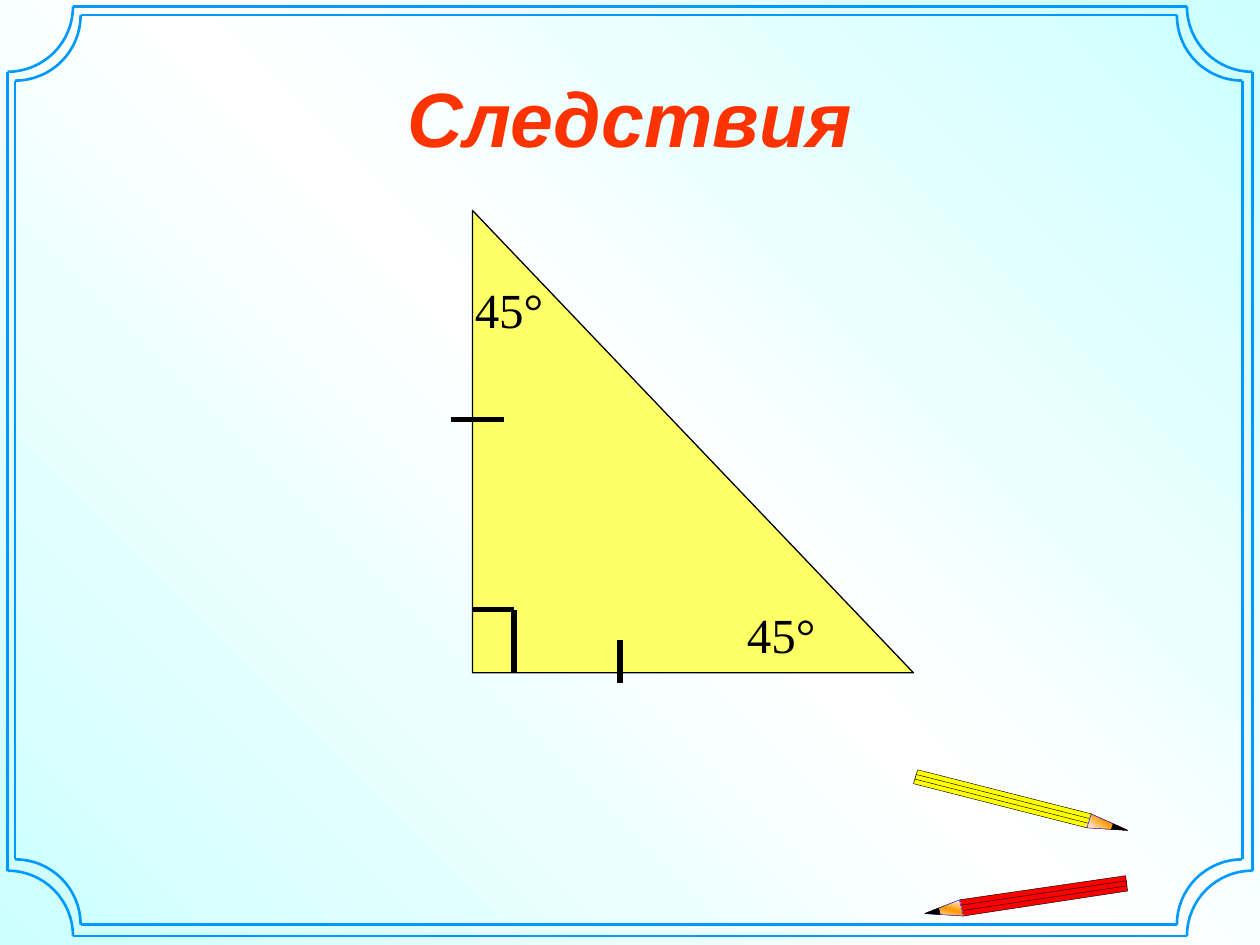
from math import cos, pi, sin

from lxml import etree
from pptx import Presentation
from pptx.dml.color import RGBColor
from pptx.enum.shapes import MSO_CONNECTOR, MSO_SHAPE
from pptx.enum.text import MSO_ANCHOR, PP_ALIGN
from pptx.oxml.ns import qn
from pptx.util import Inches, Pt

STRAIGHT = MSO_CONNECTOR.STRAIGHT
RIGHT_TRIANGLE = MSO_SHAPE.RIGHT_TRIANGLE
MIDDLE = MSO_ANCHOR.MIDDLE
CENTER = PP_ALIGN.CENTER
LEFT = PP_ALIGN.LEFT

CYAN = RGBColor(0xCC, 0xFF, 0xFF)
WHITE = RGBColor(0xFF, 0xFF, 0xFF)
BLACK = RGBColor(0, 0, 0)
TITLE_RED = RGBColor(0xFF, 0x33, 0x00)
TRIANGLE_YELLOW = RGBColor(0xFF, 0xFF, 0x66)
FRAME_BLUE = RGBColor(0x00, 0x99, 0xFF)
PENCIL_YELLOW = RGBColor(0xFF, 0xFF, 0x00)
PENCIL_RED = RGBColor(0xFF, 0, 0)
WOOD_ORANGE = RGBColor(0xFF, 0x99, 0x00)
WOOD_EDGE = RGBColor(0, 0, 0xFF)


def set_gradient(fill, edge, middle, angle):
    fill.gradient()
    fill.gradient_angle = angle
    stops = fill._xPr.find(qn("a:gradFill")).find(qn("a:gsLst"))
    for stop in list(stops):
        stops.remove(stop)
    for position, color in ((0, edge), (50000, middle), (100000, edge)):
        stop = etree.SubElement(stops, qn("a:gs"), pos=str(position))
        etree.SubElement(stop, qn("a:srgbClr"), val=str(color))


def add_line(slide, start, end, color, width):
    line = slide.shapes.add_connector(
        STRAIGHT, *(Inches(value) for value in (*start, *end)))
    line.line.color.rgb = color
    line.line.width = Pt(width)
    etree.SubElement(line._element.spPr, qn("a:effectLst"))


def add_outline(slide, points, color, width, closed=True):
    corners = [(Inches(x), Inches(y)) for x, y in points]
    builder = slide.shapes.build_freeform(*corners[0])
    builder.add_line_segments(corners[1:], close=closed)
    outline = builder.convert_to_shape()
    outline.shadow.inherit = False
    outline.line.color.rgb = color
    outline.line.width = Pt(width)
    outline.fill.background()
    return outline


def add_text(slide, box, text, size, font, color, align=LEFT):
    frame = slide.shapes.add_textbox(*(Inches(v) for v in box)).text_frame
    frame.word_wrap = True
    frame.text = text
    paragraph = frame.paragraphs[0]
    paragraph.alignment = align
    run_font = paragraph.runs[0].font
    run_font.size = Pt(size)
    run_font.name = font
    run_font.color.rgb = color
    return frame


def add_title(slide, box):
    frame = add_text(slide, box, "Следствия", 44, "Arial", TITLE_RED, CENTER)
    frame.vertical_anchor = MIDDLE
    run_font = frame.paragraphs[0].runs[0].font
    run_font.bold = True
    run_font.italic = True


def add_frame(slide, box, radius=0.52, steps=16):
    left, top, width, height = box
    right, bottom = left + width, top + height
    for y in (top, bottom):
        add_line(slide, (left + radius, y), (right - radius, y), FRAME_BLUE, 1.5)
    for x in (left, right):
        add_line(slide, (x, top + radius), (x, bottom - radius), FRAME_BLUE, 1.5)
    turns = [step * pi / 2 / steps for step in range(steps + 1)]
    for x, x_way in ((left, 1), (right, -1)):
        for y, y_way in ((top, 1), (bottom, -1)):
            arc = [(x + x_way * radius * cos(turn), y + y_way * radius * sin(turn))
                   for turn in turns]
            add_outline(slide, arc, FRAME_BLUE, 1.5, closed=False)


def add_triangle(slide, box):
    left, top, width, height = box
    bottom = top + height
    triangle = slide.shapes.add_shape(RIGHT_TRIANGLE, *(Inches(v) for v in box))
    triangle.shadow.inherit = False
    triangle.fill.solid()
    triangle.fill.fore_color.rgb = TRIANGLE_YELLOW
    triangle.line.color.rgb = BLACK
    triangle.line.width = Pt(0.75)

    for x, y, label_width in ((left - 0.08, top + 0.5, 0.83),
                              (left + 2.08, top + 3.08, 0.9)):
        label = add_text(slide, (x, y, label_width, 0.57), "45°", 28,
                         "Times New Roman", BLACK)
        label.paragraphs[0].space_before = Pt(3)

    corner = (left + 0.33, bottom - 0.5)
    marks = (
        (corner, (corner[0], bottom)),
        ((left, corner[1]), corner),
        ((left + 1.17, bottom - 0.26), (left + 1.17, bottom + 0.08)),
        ((left - 0.17, top + 1.66), (left + 0.25, top + 1.66)),
    )
    for start, end in marks:
        add_line(slide, start, end, BLACK, 3)


def between(start, end, share):
    return tuple(a + (b - a) * share for a, b in zip(start, end))


def add_pencil(slide, box, outline, color, wood_angle):
    left, top, width, height = box
    tail_top, tail_bottom, neck_top, neck_bottom, tip = [
        (left + x * width, top + y * height) for x, y in outline]

    for upper, lower in ((0, 1), (1 / 3, 2 / 3)):
        band = add_outline(slide, [
            between(tail_top, tail_bottom, upper),
            between(neck_top, neck_bottom, upper),
            between(neck_top, neck_bottom, lower),
            between(tail_top, tail_bottom, lower),
        ], BLACK, 0.25)
        band.fill.solid()
        band.fill.fore_color.rgb = color

    wood = add_outline(slide, [neck_top, neck_bottom, tip], WOOD_EDGE, 0.25)
    set_gradient(wood.fill, WHITE, WOOD_ORANGE, wood_angle)
    lead = add_outline(slide, [between(neck_top, tip, 0.6),
                               between(neck_bottom, tip, 0.6), tip], BLACK, 0.25)
    lead.fill.solid()
    lead.fill.fore_color.rgb = BLACK


def main():
    presentation = Presentation()
    presentation.slide_width = Inches(10)
    presentation.slide_height = Inches(7.5)
    slide = presentation.slides.add_slide(presentation.slide_layouts[6])
    set_gradient(slide.background.fill, CYAN, WHITE, 45)

    add_frame(slide, (0.12, 0.12, 9.74, 7.22))
    add_frame(slide, (0.06, 0.05, 9.88, 7.38))
    add_pencil(slide, (7.25, 6.11, 1.7, 0.48),
               ((0.02, 0), (0, 0.23), (0.83, 0.73), (0.81, 0.96), (1, 1)),
               PENCIL_YELLOW, 50)
    add_pencil(slide, (7.34, 6.95, 1.61, 0.32),
               ((0.99, 0), (1, 0.38), (0.17, 0.6), (0.19, 1), (0, 0.94)),
               PENCIL_RED, 255)
    add_title(slide, (0.5, 0.3, 9, 1.25))
    add_triangle(slide, (3.75, 1.67, 3.5, 3.67))

    presentation.save("out.pptx")


if __name__ == "__main__":
    main()
